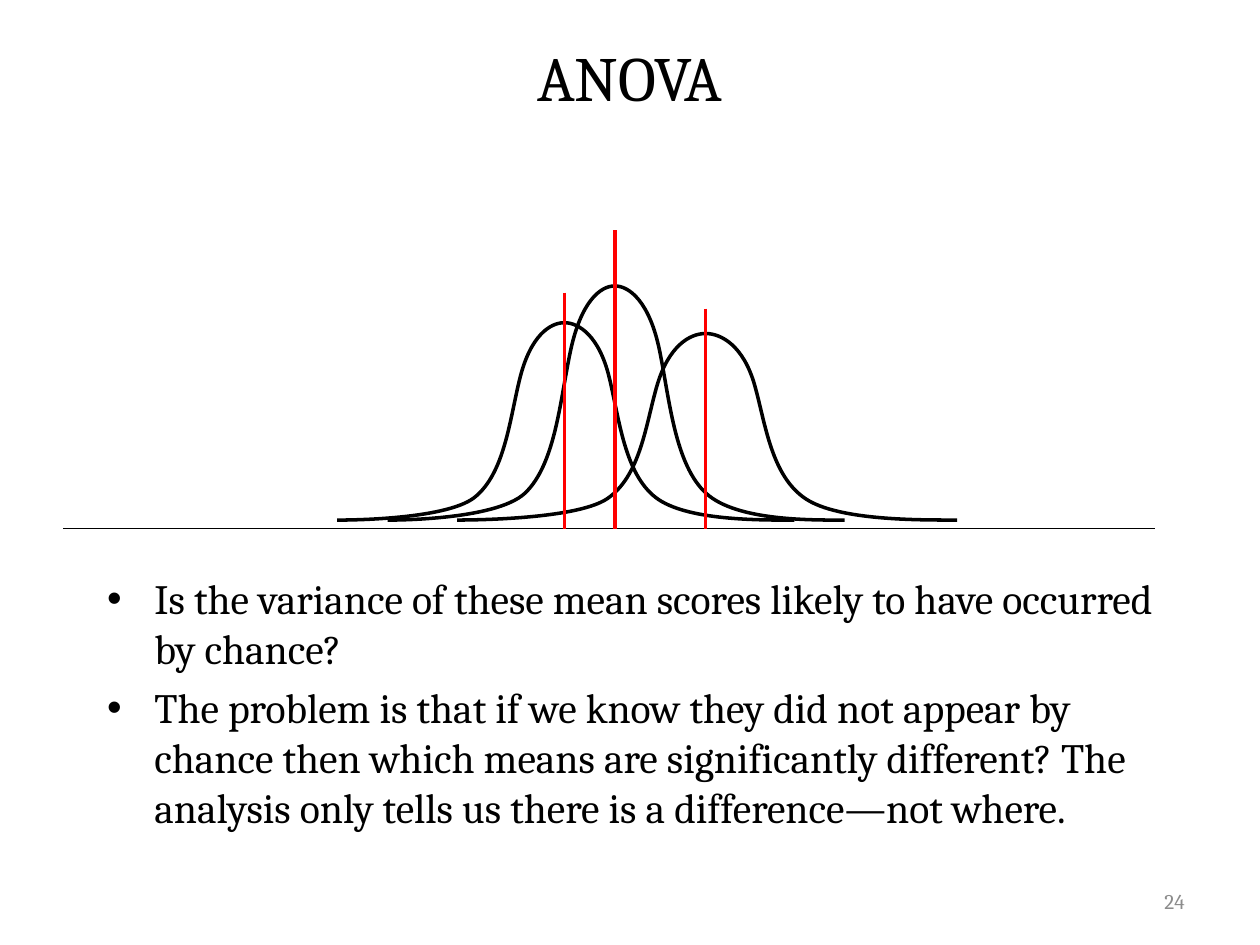
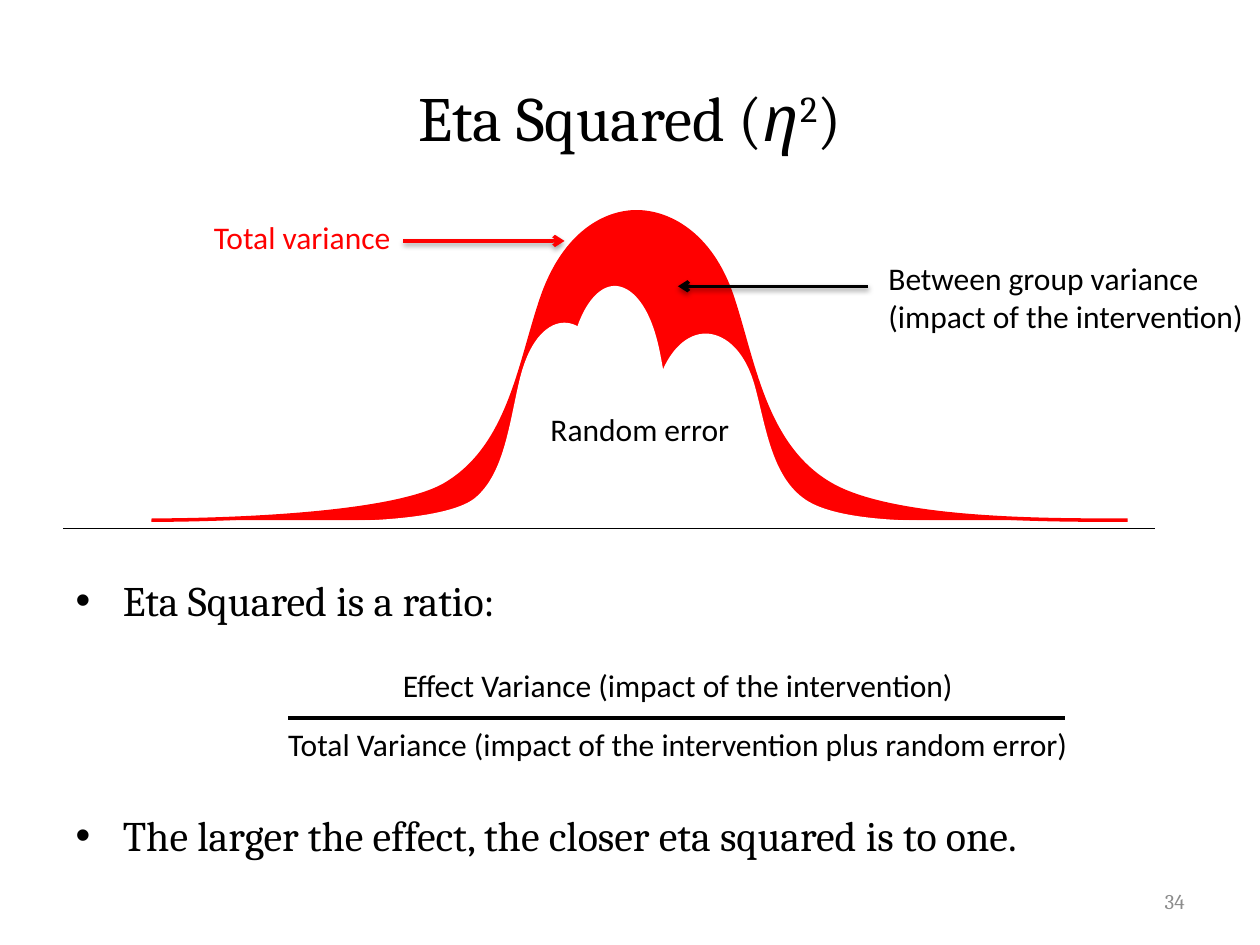
"""Build two statistics slides on ANOVA and eta squared."""
from lxml import etree
from pptx import Presentation
from pptx.dml.color import RGBColor
from pptx.enum.shapes import MSO_CONNECTOR
from pptx.enum.text import MSO_ANCHOR, MSO_AUTO_SIZE, PP_ALIGN
from pptx.oxml.ns import qn
from pptx.util import Pt

STRAIGHT = MSO_CONNECTOR.STRAIGHT
TOP, MIDDLE = MSO_ANCHOR.TOP, MSO_ANCHOR.MIDDLE
NO_AUTOFIT = MSO_AUTO_SIZE.NONE
LEFT, CENTER, RIGHT = PP_ALIGN.LEFT, PP_ALIGN.CENTER, PP_ALIGN.RIGHT
BLACK, RED, WHITE, GRAY = "000000", "FF0000", "FFFFFF", "8C8C8C"
SERIF, SANS = "Cambria", "Calibri"

AXIS_Y = 302.1
BELL_CENTER = 0.497
BELL_PERCENTS = [
    (100, 100),
    (92.6, 100), (76.3, 100.4), (69.7, 88.6),
    (62.8, 76.3), (61.7, 48.5), (59.5, 27.6),
    (57.3, 6.8), (52.9, 0), (49.7, 0),
    (46.5, 0), (42.3, 6.8), (40, 27.8),
    (37.7, 49), (36.7, 76.3), (30, 88.6),
    (23.4, 100.4), (0, 100), (0, 100),
]
GROUP_BELLS = [(192.7, 261.2, 184.4), (221.5, 261.2, 163.4), (261.2, 285.8, 190.6)]
MEAN_TOPS = [167.3, 131.6, 176.4]


def hex_color(value):
    """Turn a hex string into a colour."""
    return RGBColor.from_string(value)


def style_font(font, name, size, color):
    """Set the typeface, size and hex colour of a font."""
    font.name, font.size = name, Pt(size)
    font.color.rgb = hex_color(color)


presentation = Presentation()
presentation.slide_width, presentation.slide_height = Pt(720), Pt(540)

pages = [
    ([("ANOVA", False, 0)], (54, 7.6, 612, 72), (54, 324, 612, 162), 23.8, 5,
     ["Is the variance of these mean scores likely to have occurred by chance?",
      "The problem is that if we know they did not appear by chance then which means are "
      "significantly different? The analysis only tells us there is a difference—not where."]),
    ([("Eta Squared (", False, 0), ("η", True, 0), ("2", False, 30000), (")", False, 0)],
     (36, 21.6, 648, 90), (36, 324.7, 648, 69), 24, 105.5,
     ["Eta Squared is a ratio:", "The larger the effect, the closer eta squared is to one."]),
]
for title_runs, title_box, body_box, body_size, bullet_gap, bullets in pages:
    slide = presentation.slides.add_slide(presentation.slide_layouts[1])
    title, body = slide.shapes.title, slide.placeholders[1]
    for shape, box in ((title, title_box), (body, body_box)):
        shape.left, shape.top, shape.width, shape.height = map(Pt, box)
        shape.text_frame.auto_size = NO_AUTOFIT
    paragraph = title.text_frame.paragraphs[0]
    style_font(paragraph.font, SERIF, 36, BLACK)
    for text, italic, baseline in title_runs:
        run = paragraph.add_run()
        run.text = text
        if italic:
            run.font.italic = True
        if baseline:
            run._r.get_or_add_rPr().set("baseline", str(baseline))
    body.text_frame.text = "\n".join(bullets)
    for paragraph in body.text_frame.paragraphs:
        style_font(paragraph.font, SERIF, body_size, BLACK)
    body.text_frame.paragraphs[-1].space_before = Pt(bullet_gap)

anova, eta = presentation.slides

bells = [(anova, bell, 297.2, None, BLACK) for bell in GROUP_BELLS]
bells.append((eta, (86.6, 557.8, 121), 297.2, RED, RED))
bells += [(eta, bell, 297.8, WHITE, None) for bell in GROUP_BELLS]
for slide, (left, width, top), foot, fill, line in bells:
    points = [(Pt(left + x * width / 100), Pt(top + y * (foot - top) / 100))
              for x, y in BELL_PERCENTS]
    builder = slide.shapes.build_freeform(*points[0])
    builder.add_line_segments(points[1:], close=False)
    shape = builder.convert_to_shape()
    outline = shape._element.find(".//" + qn("a:path"))
    segments = outline.findall(qn("a:lnTo"))
    for start in range(0, len(segments), 3):
        curve = etree.SubElement(outline, qn("a:cubicBezTo"))
        for segment in segments[start:start + 3]:
            curve.append(segment[0])
            outline.remove(segment)
    shape.shadow.inherit = False
    for target, color in ((shape.fill, fill), (shape.line.fill, line)):
        if color:
            target.solid()
            target.fore_color.rgb = hex_color(color)
        else:
            target.background()
    if line:
        shape.line.width = Pt(2)

lines = [(slide, (36, AXIS_Y, 660, AXIS_Y), BLACK, 0.75, False) for slide in (anova, eta)]
for (left, width, _), mean_top in zip(GROUP_BELLS, MEAN_TOPS):
    mean_x = left + BELL_CENTER * width
    lines.append((anova, (mean_x, mean_top, mean_x, AXIS_Y), RED, 2, False))
lines += [
    (eta, (496, 163.6, 387.4, 163.6), BLACK, 2, True),
    (eta, (230.4, 137.7, 322.6, 137.7), RED, 2, True),
    (eta, (164.8, 410.4, 608.4, 410.4), BLACK, 2, False),
]
for slide, ends, color, width, is_arrow in lines:
    connector = slide.shapes.add_connector(STRAIGHT, *map(Pt, ends))
    connector.line.color.rgb = hex_color(color)
    connector.line.width = Pt(width)
    properties = connector._element.spPr
    effects = etree.SubElement(properties, qn("a:effectLst"))
    if is_arrow:
        etree.SubElement(properties.find(qn("a:ln")), qn("a:tailEnd"), type="arrow")
        shadow = etree.SubElement(effects, qn("a:outerShdw"), blurRad=str(Pt(3.1)),
                                  dist=str(Pt(1.6)), dir="5400000", rotWithShape="0")
        shadow_color = etree.SubElement(shadow, qn("a:srgbClr"), val=BLACK)
        etree.SubElement(shadow_color, qn("a:alpha"), val="38000")

NUMBER_BOX = (516, 500.4, 168, 28.8)
labels = [
    (anova, "24", NUMBER_BOX, SERIF, 12, GRAY, RIGHT, MIDDLE, True),
    (eta, "34", NUMBER_BOX, SERIF, 12, GRAY, RIGHT, MIDDLE, True),
    (eta, "Between group variance\v(impact of the intervention)", (500.6, 144.7, 219.4, 51),
     SANS, 18, BLACK, LEFT, TOP, False),
    (eta, "Total variance", (115.2, 121, 164, 29), SANS, 18, RED, LEFT, TOP, True),
    (eta, "Random error", (300.5, 230.8, 130.3, 29), SANS, 18, BLACK, CENTER, TOP, True),
    (eta, "Effect Variance (impact of the intervention)\n"
     "Total Variance (impact of the intervention plus random error)",
     (138.3, 377.3, 498.2, 63.4), SANS, 18, BLACK, CENTER, TOP, True),
]
for slide, text, box, font_name, size, color, alignment, anchor, wrap in labels:
    frame = slide.shapes.add_textbox(*map(Pt, box)).text_frame
    frame.word_wrap, frame.vertical_anchor = wrap, anchor
    frame.text = text
    for paragraph in frame.paragraphs:
        paragraph.alignment = alignment
        style_font(paragraph.font, font_name, size, color)
    for paragraph in frame.paragraphs[:-1]:
        paragraph.space_after = Pt(12)

presentation.save("out.pptx")
